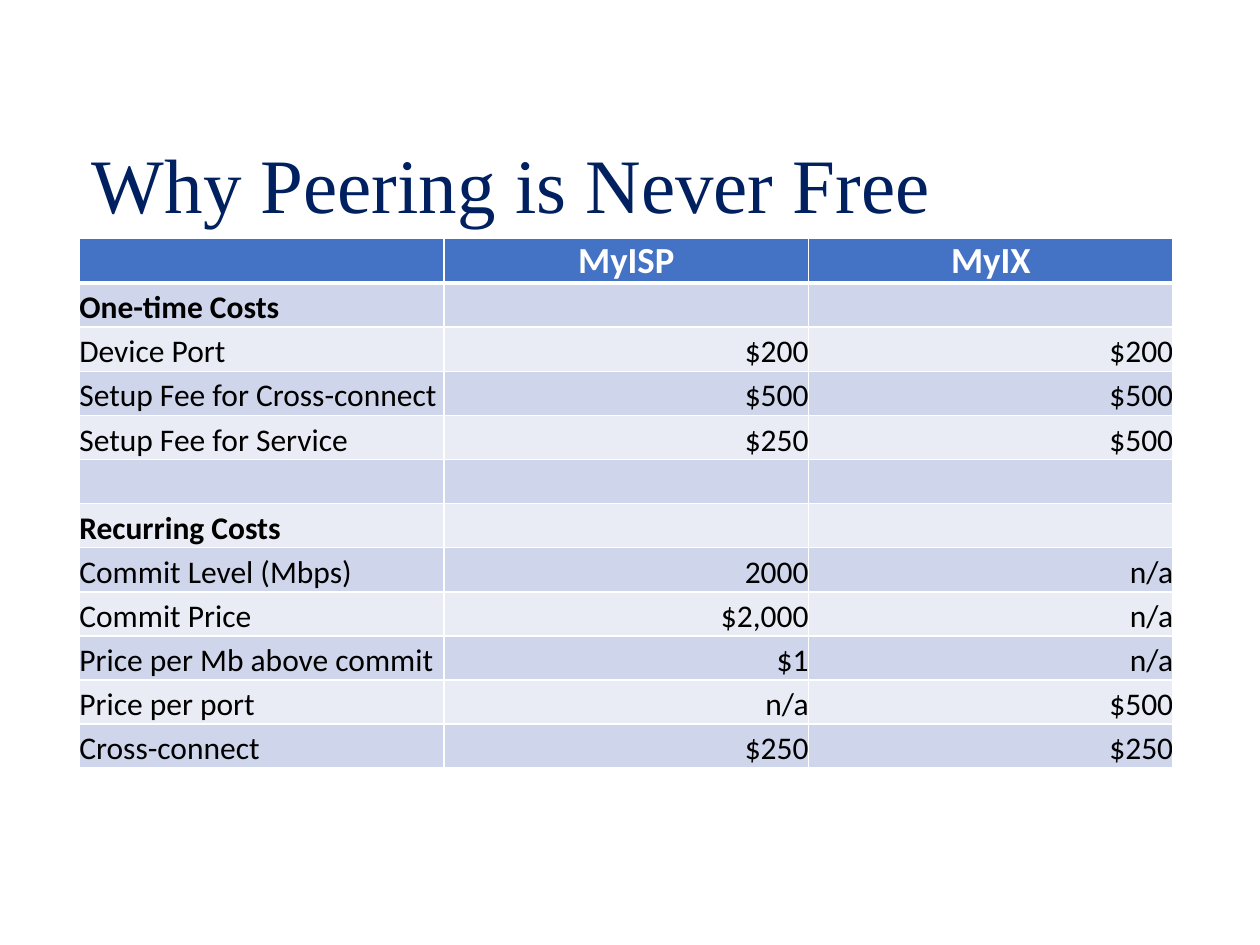
from collections import namedtuple

from lxml.etree import SubElement
from pptx import Presentation
from pptx.dml.color import RGBColor
from pptx.enum.text import MSO_ANCHOR as Anchor, PP_ALIGN as Align
from pptx.oxml.ns import qn
from pptx.util import Cm, Pt

Box = namedtuple("Box", "left top width height")

TITLE_BOX = Box(Cm(1.6), Cm(2.41), Cm(21.89), Cm(2.77))
TABLE_BOX = Box(Cm(1.6), Cm(4.8), Cm(22.05), Cm(10.67))
BAND_COLORS = ("E9EBF5", "CFD5EA")
SECTIONS = ("One-time Costs", "Recurring Costs")
COSTS = (
    ("", "MyISP", "MyIX"),
    (SECTIONS[0], "", ""),
    ("Device Port", "$200", "$200"),
    ("Setup Fee for Cross-connect", "$500", "$500"),
    ("Setup Fee for Service", "$250", "$500"),
    ("", "", ""),
    (SECTIONS[1], "", ""),
    ("Commit Level (Mbps)", "2000", "n/a"),
    ("Commit Price", "$2,000", "n/a"),
    ("Price per Mb above commit", "$1", "n/a"),
    ("Price per port", "n/a", "$500"),
    ("Cross-connect", "$250", "$250"),
)


def color(value):
    """Turn a hex string into a colour."""
    return RGBColor.from_string(value)


def format_runs(para, name, size, value, bold=False):
    """Give every run of a paragraph the same font."""
    for span in para.runs:
        span.font.name = name
        span.font.size = Pt(size)
        span.font.bold = bold
        span.font.color.rgb = color(value)


def add_borders(cell, widths):
    """Draw white cell borders with widths for left, right, top and bottom."""
    properties = cell._tc.get_or_add_tcPr()
    for side, width in zip("LRTB", widths):
        line = SubElement(properties, qn(f"a:ln{side}"), w=str(Pt(width)))
        fill = SubElement(line, qn("a:solidFill"))
        SubElement(fill, qn("a:srgbClr"), val="FFFFFF")


def place_title(page, box, text):
    """Move the title placeholder into the box and format its text."""
    title = page.shapes.title
    title.left, title.top, title.width, title.height = box
    frame = title.text_frame
    frame.text = text
    frame.word_wrap = True
    frame.vertical_anchor = Anchor.MIDDLE
    para = frame.paragraphs[0]
    para.alignment = Align.LEFT
    para.line_spacing = 0.9
    format_runs(para, "Times New Roman", 44, "002060")


def fill_cell(cell, text, row, column):
    """Write and style one cell according to its place in the table."""
    header = row == 0
    add_borders(cell, (1, 1, 3 if row == 1 else 1, 3 if header else 1))
    cell.fill.solid()
    cell.fill.fore_color.rgb = color("4472C4" if header else BAND_COLORS[row % 2])
    cell.margin_left = cell.margin_right = cell.margin_top = cell.margin_bottom = 0
    cell.vertical_anchor = Anchor.MIDDLE if header else Anchor.BOTTOM
    cell.text_frame.text = text
    para = cell.text_frame.paragraphs[0]
    if header:
        para.alignment = Align.CENTER
        format_runs(para, "Calibri", 21, "FFFFFF", True)
    else:
        para.alignment = Align.RIGHT if column else Align.LEFT
        format_runs(para, "Calibri", 18, "000000", text in SECTIONS)


def place_cost_table(page, box, rows):
    """Fill the box with a cost table of equal rows and columns."""
    table = page.shapes.add_table(len(rows), len(rows[0]), *box).table
    for row, texts in enumerate(rows):
        table.rows[row].height = box.height // len(rows)
        for column, text in enumerate(texts):
            fill_cell(table.cell(row, column), text, row, column)


def main():
    """Build the deck and save it."""
    deck = Presentation()
    deck.slide_width, deck.slide_height = Cm(25.4), Cm(19.05)
    page = deck.slides.add_slide(deck.slide_layouts[5])
    place_title(page, TITLE_BOX, "Why Peering is Never Free")
    place_cost_table(page, TABLE_BOX, COSTS)
    deck.save("out.pptx")


if __name__ == "__main__":
    main()
